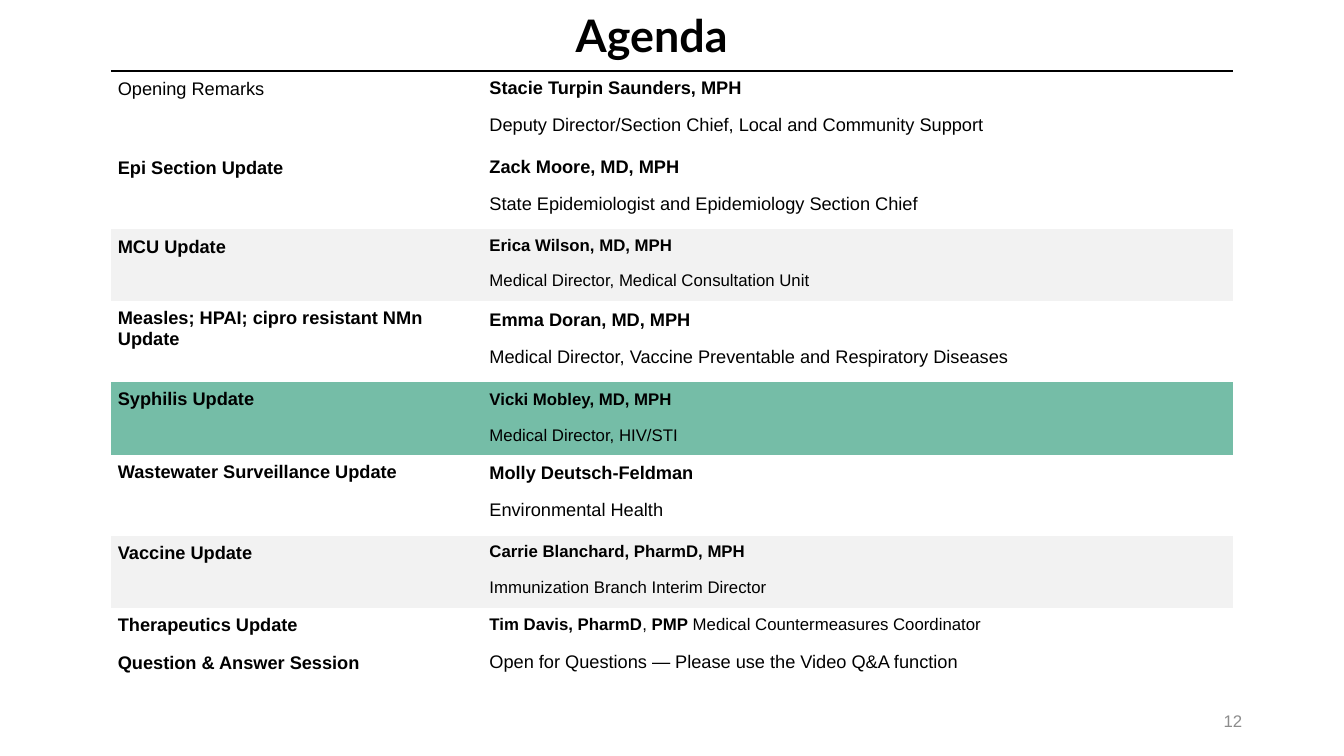
import lxml.etree
import pptx
import pptx.chart.data
import pptx.dml.color
import pptx.enum.text
import pptx.oxml.ns
import pptx.util

WIDE, HIGH = 13.33, 7.5
INK = {"text": "000000", "page": "8C8C8C", "band": "F2F2F2", "now": "75BDA7"}
COLS = (27.65, 55.85)  # percent of slide width
ALIGN = pptx.enum.text.PP_ALIGN

# topic, topic bold, topic spacing, (speaker, spacing), role, size, height %, fill
AGENDA = [
    ("Opening Remarks", False, 1.07, "Stacie Turpin Saunders, MPH", 1,
     "Deputy Director/Section Chief, Local and Community Support", 13, 10.45, None),
    ("Epi Section Update", True, 1.07, "Zack Moore, MD, MPH", 1,
     "State Epidemiologist and Epidemiology Section Chief", 13, 10.45, None),
    ("MCU Update", True, 1.07, "Erica Wilson, MD, MPH", 1,
     "Medical Director, Medical Consultation Unit", 12, 9.55, "band"),
    ("Measles; HPAI; cipro resistant NMn Update", True, 1, "Emma Doran, MD, MPH", 1.07,
     "Medical Director, Vaccine Preventable and Respiratory Diseases", 13, 10.7, None),
    ("Syphilis Update", True, 1, "Vicki Mobley, MD, MPH", 1.07,
     "Medical Director, HIV/STI", 12, 9.5, "now"),
    ("Wastewater Surveillance Update", True, 1, "Molly Deutsch-Feldman", 1.07,
     "Environmental Health", 13, 10.7, None),
    ("Vaccine Update", True, 1, "Carrie Blanchard, PharmD, MPH", 1,
     "Immunization Branch Interim Director", 12, 9.55, "band"),
]
THERAPY = [("Tim Davis, PharmD", True), (", ", False), ("PMP", True),
           (" Medical Countermeasures Coordinator", False)]
ASK = [("Open for Questions — Please use the Video Q&A function", False)]


def across(part):
    """Length for a percentage of the slide width."""
    return pptx.util.Inches(WIDE * part / 100)


def down(part):
    """Length for a percentage of the slide height."""
    return pptx.util.Inches(HIGH * part / 100)


def color(name):
    return pptx.dml.color.RGBColor.from_string(INK[name])


def add_run(para, text, size, bold=False, face="Arial", ink="text"):
    run = para.add_run()
    run.text = text
    font = run.font
    font.size, font.bold, font.name = pptx.util.Pt(size), bold, face
    font.color.rgb = color(ink)


def add_label(slide, place, text, size, align, **look):
    left, top, width, height = place
    box = slide.shapes.add_textbox(across(left), down(top), across(width), down(height))
    frame = box.text_frame
    frame.word_wrap = True
    frame.vertical_anchor = pptx.enum.text.MSO_ANCHOR.MIDDLE
    para = frame.paragraphs[0]
    para.alignment = align
    add_run(para, text, size, **look)


def set_edges(cell, ruled):
    """Clear all cell borders, or keep only a black rule on top."""
    props = cell._tc.get_or_add_tcPr()
    name = pptx.oxml.ns.qn
    for side in "LRTB":
        edge = lxml.etree.SubElement(props, name(f"a:ln{side}"))
        if ruled and side == "T":
            edge.set("w", str(pptx.util.Pt(2.25)))
            fill = lxml.etree.SubElement(edge, name("a:solidFill"))
            lxml.etree.SubElement(fill, name("a:srgbClr")).set("val", INK["text"])
        else:
            lxml.etree.SubElement(edge, name("a:noFill"))


def fill_cell(cell, lines, size, lead=1, fill=None, ruled=False):
    """Write lines, each a list of (text, bold); lead spaces the first line."""
    set_edges(cell, ruled)
    if fill:
        cell.fill.solid()
        cell.fill.fore_color.rgb = color(fill)
    else:
        cell.fill.background()
    inset = pptx.util.Inches(0.07)
    cell.margin_left = cell.margin_right = inset
    cell.margin_top = cell.margin_bottom = inset
    frame = cell.text_frame
    for i, runs in enumerate(lines):
        para = frame.add_paragraph() if i else frame.paragraphs[0]
        para.space_before = pptx.util.Pt(6 if i else 0)
        para.space_after = pptx.util.Pt(6)
        para.line_spacing = 1.0 if i else float(lead)
        for text, bold in runs:
            add_run(para, text, size, bold)


def add_agenda(slide):
    rows = [([[(topic, strong)]], lead, [[(who, True)], [(role, False)]], gap, size, high, fill)
            for topic, strong, lead, who, gap, role, size, high, fill in AGENDA]
    rows += [([[("Therapeutics Update", True)]], 1, [THERAPY], 1, 12, 4.9, None),
             ([[("Question & Answer Session", True)]], 1.07, [ASK], 1, 13, 5.3, None)]
    total = sum(row[5] for row in rows)
    table = slide.shapes.add_table(len(rows), len(COLS), across(8.25), down(9.4),
                                   across(sum(COLS)), down(total)).table
    table.first_row = table.horz_banding = False
    for col, wide in zip(table.columns, COLS):
        col.width = across(wide)
    for i, (topic, lead, speaker, gap, size, high, fill) in enumerate(rows):
        table.rows[i].height = down(high)
        fill_cell(table.cell(i, 0), topic, 13, lead, fill, i == 0)
        fill_cell(table.cell(i, 1), speaker, size, gap, fill, i == 0)


def main():
    deck = pptx.Presentation()
    deck.slide_width, deck.slide_height = across(100), down(100)
    slide = deck.slides.add_slide(deck.slide_layouts[6])
    add_label(slide, (70.67, 92.67, 22.5, 5.33), "12", 12, ALIGN.RIGHT, ink="page")
    add_agenda(slide)
    add_label(slide, (42.1, 0.27, 36.3, 8.53), "Agenda", 32, ALIGN.LEFT, bold=True, face="Lato")
    deck.save("out.pptx")


if __name__ == "__main__":
    main()
